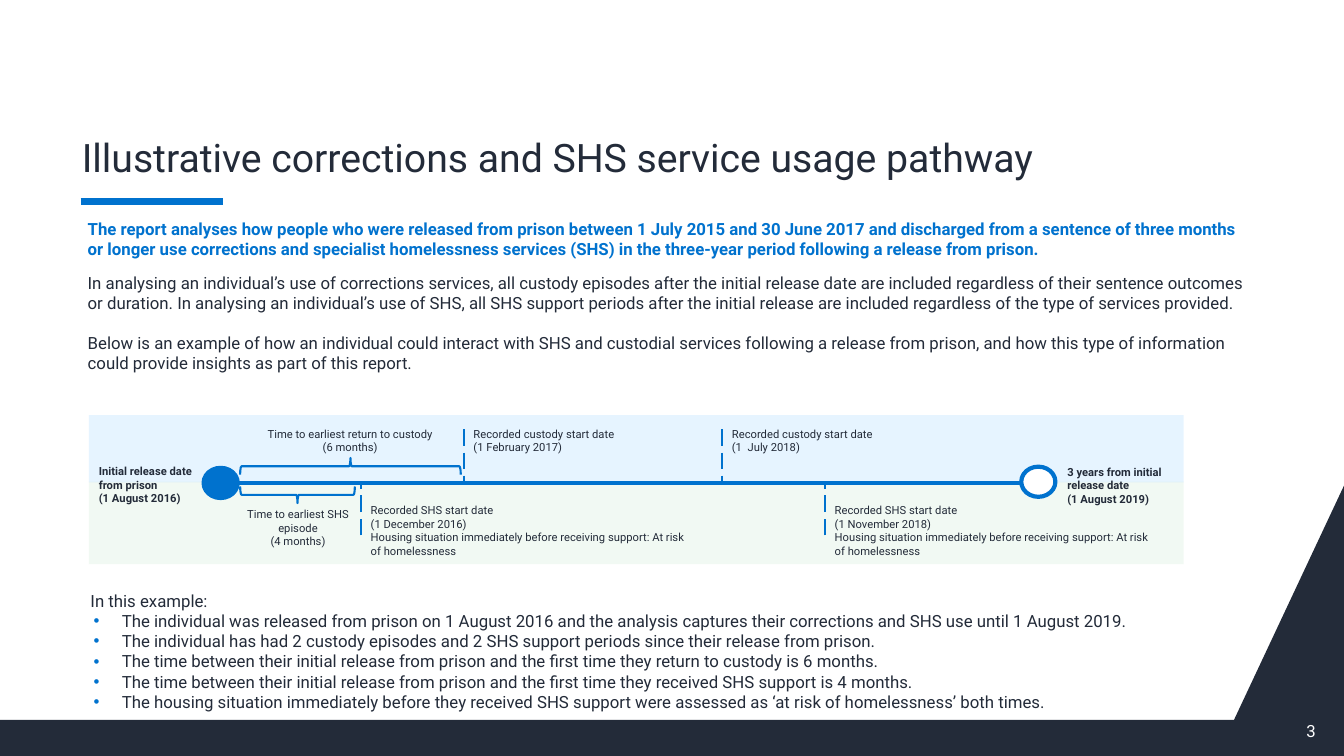
from dataclasses import dataclass

from lxml.etree import SubElement
from pptx import Presentation
from pptx.dml.color import RGBColor
from pptx.enum.dml import MSO_LINE
from pptx.enum.shapes import MSO_CONNECTOR, MSO_SHAPE
from pptx.enum.text import MSO_ANCHOR, MSO_AUTO_SIZE, PP_ALIGN
from pptx.oxml.ns import qn
from pptx.util import Cm, Pt


@dataclass(frozen=True)
class Theme:
    font: str = "Roboto"
    navy: str = "232B39"
    blue: str = "0072CE"
    white: str = "FFFFFF"
    custody_band: str = "C2E4FF"
    support_band: str = "DEF2E3"
    band_opacity: int = 40
    title_size: int = 28
    body_size: int = 12
    label_size: int = 8


@dataclass(frozen=True)
class Box:
    """A frame in centimetres."""
    left: float
    top: float
    width: float
    height: float

    def lengths(self) -> tuple:
        return Cm(self.left), Cm(self.top), Cm(self.width), Cm(self.height)


@dataclass(frozen=True)
class Event:
    x: float
    is_custody: bool
    lines: tuple[str, ...]


@dataclass(frozen=True)
class Interval:
    end: float
    middle: float
    rotation: int
    label_box: Box
    lines: tuple[str, ...]


@dataclass(frozen=True)
class Milestone:
    circle: Box
    fill: str
    label_box: Box
    lines: tuple[str, ...]


THEME = Theme()
TIMELINE_Y = 12.17
INTERVAL_START = 6.05
BRACE_DEPTH = 0.42
HOUSING = "Housing situation immediately before receiving support: At risk of homelessness"

BANDS = [
    (Box(2.24, 12.14, 27.58, 2.08), THEME.support_band),
    (Box(2.24, 10.46, 27.58, 1.7), THEME.custody_band),
]
MILESTONES = [
    Milestone(Box(5.13, 11.79, 0.86, 0.76), THEME.blue, Box(2.24, 11.58, 3.02, 1.12),
              ("Initial release date from prison", "(1 August 2016)")),
    Milestone(Box(25.73, 11.76, 0.86, 0.76), THEME.white, Box(26.64, 11.6, 3.18, 1.12),
              ("3 years from initial release date", "(1 August 2019)")),
]
EVENTS = [
    Event(11.68, True, ("Recorded custody start date", "(1 February 2017)")),
    Event(18.19, True, ("Recorded custody start date", "(1  July 2018)")),
    Event(9.09, False, ("Recorded SHS start date", "(1 December 2016)", HOUSING)),
    Event(20.78, False, ("Recorded SHS start date", "(1 November 2018)", HOUSING)),
]
INTERVALS = [
    Interval(11.61, 11.75, 270, Box(6.22, 10.64, 5.21, 0.84),
             ("Time to earliest return to custody", "(6 months)")),
    Interval(8.94, 12.47, 90, Box(5.59, 12.67, 3.84, 1.12),
             ("Time to earliest SHS episode", "(4 months)")),
]
INTRODUCTION = (
    "The report analyses how people who were released from prison between 1 July 2015 and 30 June 2017 and discharged from a sentence of three months or longer use corrections and specialist homelessness services (SHS) in the three-year period following a release from prison.",
    "In analysing an individual’s use of corrections services, all custody episodes after the initial release date are included regardless of their sentence outcomes or duration. In analysing an individual’s use of SHS, all SHS support periods after the initial release are included regardless of the type of services provided.",
    "Below is an example of how an individual could interact with SHS and custodial services following a release from prison, and how this type of information could provide insights as part of this report.",
)
EXAMPLE = (
    "In this example:",
    "The individual was released from prison on 1 August 2016 and the analysis captures their corrections and SHS use until 1 August 2019.",
    "The individual has had 2 custody episodes and 2 SHS support periods since their release from prison.",
    "The time between their initial release from prison and the first time they return to custody is 6 months.",
    "The time between their initial release from prison and the first time they received SHS support is 4 months.",
    "The housing situation immediately before they received SHS support were assessed as ‘at risk of homelessness’ both times.",
)


def rgb(color: str) -> RGBColor:
    return RGBColor.from_string(color)


def style_font(paragraph, size: int, color: str = THEME.navy, bold: bool = False) -> None:
    font = paragraph.font
    font.name, font.size, font.bold = THEME.font, Pt(size), bold
    font.color.rgb = rgb(color)


def add_text(shapes, box: Box, lines: tuple[str, ...], size: int = THEME.label_size,
             color: str = THEME.navy, bold: bool = False, align=PP_ALIGN.LEFT) -> list:
    """Add a wrapping text box and return its paragraphs."""
    frame = shapes.add_textbox(*box.lengths()).text_frame
    frame.word_wrap = True
    frame.text = "\n".join(lines)
    for paragraph in frame.paragraphs:
        paragraph.alignment = align
        style_font(paragraph, size, color, bold)
    return list(frame.paragraphs)


def add_shape(shapes, kind, box: Box, fill: str | None = None, line_width: float = 0):
    shape = shapes.add_shape(kind, *box.lengths())
    shape.shadow.inherit = False
    if fill:
        shape.fill.solid()
        shape.fill.fore_color.rgb = rgb(fill)
    else:
        shape.fill.background()
    if line_width:
        shape.line.color.rgb = rgb(THEME.blue)
        shape.line.width = Pt(line_width)
    else:
        shape.line.fill.background()
    return shape


def add_line(shapes, start: tuple[float, float], end: tuple[float, float], width: float,
             dash=None) -> None:
    line = shapes.add_connector(MSO_CONNECTOR.STRAIGHT, *map(Cm, start + end))
    line.line.color.rgb = rgb(THEME.blue)
    line.line.width = Pt(width)
    if dash:
        line.line.dash_style = dash
    SubElement(line._element.spPr, qn("a:effectLst"))


def add_band(shapes, box: Box, color: str) -> None:
    band = add_shape(shapes, MSO_SHAPE.RECTANGLE, box, color)
    color_element = next(band._element.spPr.iter(qn("a:srgbClr")))
    SubElement(color_element, qn("a:alpha"), val=str(THEME.band_opacity * 1000))


def add_bullet(paragraph) -> None:
    properties = paragraph._p.get_or_add_pPr()
    properties.set("marL", str(Cm(0.79)))
    properties.set("indent", str(Cm(-0.71)))
    color = SubElement(properties, qn("a:buClr"))
    SubElement(color, qn("a:srgbClr"), val=THEME.blue)
    SubElement(properties, qn("a:buFont"), typeface="Arial")
    bullet = SubElement(properties, qn("a:buChar"), char="•")
    properties.append(properties.find(qn("a:defRPr")))
    assert bullet.getnext() is not None


def add_footer(slide) -> None:
    builder = slide.shapes.build_freeform(Cm(31.09), Cm(18.14))
    builder.add_line_segments([(Cm(x), Cm(y)) for x, y in (
        (0, 18.14), (0, 19.05), (33.86, 19.05), (33.86, 12.24))])
    footer = builder.convert_to_shape()
    footer.shadow.inherit = False
    footer.fill.solid()
    footer.fill.fore_color.rgb = rgb(THEME.navy)
    footer.line.fill.background()


def format_title(title) -> None:
    title.left, title.top, title.width, title.height = Box(1.96, 1.83, 29.9, 2.87).lengths()
    frame = title.text_frame
    frame.text = "Illustrative corrections and SHS service usage pathway"
    frame.word_wrap, frame.auto_size = True, MSO_AUTO_SIZE.NONE
    frame.vertical_anchor = MSO_ANCHOR.BOTTOM
    frame.margin_left = frame.margin_right = Cm(0.1)
    paragraph = frame.paragraphs[0]
    paragraph.alignment, paragraph.line_spacing = PP_ALIGN.LEFT, 0.9
    style_font(paragraph, THEME.title_size)


def add_timeline(slide) -> None:
    shapes = slide.shapes.add_group_shape().shapes
    for box, color in BANDS:
        add_band(shapes, box, color)
    add_line(shapes, (5.97, TIMELINE_Y), (25.98, TIMELINE_Y), 3)
    for event in EVENTS:
        tick_end = 10.82 if event.is_custody else 13.49
        add_line(shapes, (event.x, tick_end), (event.x, TIMELINE_Y), 1.5, MSO_LINE.LONG_DASH)
        label = (Box(event.x, 10.64, 5.21, 0.84) if event.is_custody
                 else Box(event.x, 12.57, 8.43, 1.42))
        add_text(shapes, label, event.lines)
    for interval in INTERVALS:
        length = interval.end - INTERVAL_START
        center = INTERVAL_START + length / 2
        box = Box(center - BRACE_DEPTH / 2, interval.middle - length / 2, BRACE_DEPTH, length)
        brace = add_shape(shapes, MSO_SHAPE.RIGHT_BRACE, box, line_width=1.5)
        brace.rotation = interval.rotation
        add_text(shapes, interval.label_box, interval.lines, align=PP_ALIGN.CENTER)
    for milestone in MILESTONES:
        add_shape(shapes, MSO_SHAPE.OVAL, milestone.circle, milestone.fill, 3)
        add_text(shapes, milestone.label_box, milestone.lines, bold=True)


def main() -> None:
    presentation = Presentation()
    presentation.slide_width, presentation.slide_height = Cm(33.86), Cm(19.05)
    slide = presentation.slides.add_slide(presentation.slide_layouts[5])
    add_footer(slide)
    add_line(slide.shapes, (2.03, 5.08), (5.61, 5.08), 4.5)
    format_title(slide.shapes.title)
    lead, scope, preview = add_text(slide.shapes, Box(1.96, 5.38, 29.9, 6.76),
                                    INTRODUCTION, THEME.body_size)
    style_font(lead, THEME.body_size, THEME.blue, bold=True)
    scope.space_before, preview.space_before = Pt(10), Pt(14)
    add_timeline(slide)
    for paragraph in add_text(slide.shapes, Box(2.03, 14.76, 29.13, 3.84),
                              EXAMPLE, THEME.body_size)[1:]:
        add_bullet(paragraph)
    add_text(slide.shapes, Box(32.66, 18.03, 1.2, 0.76), ("3",), THEME.body_size, THEME.white)
    presentation.save("out.pptx")


if __name__ == "__main__":
    main()
